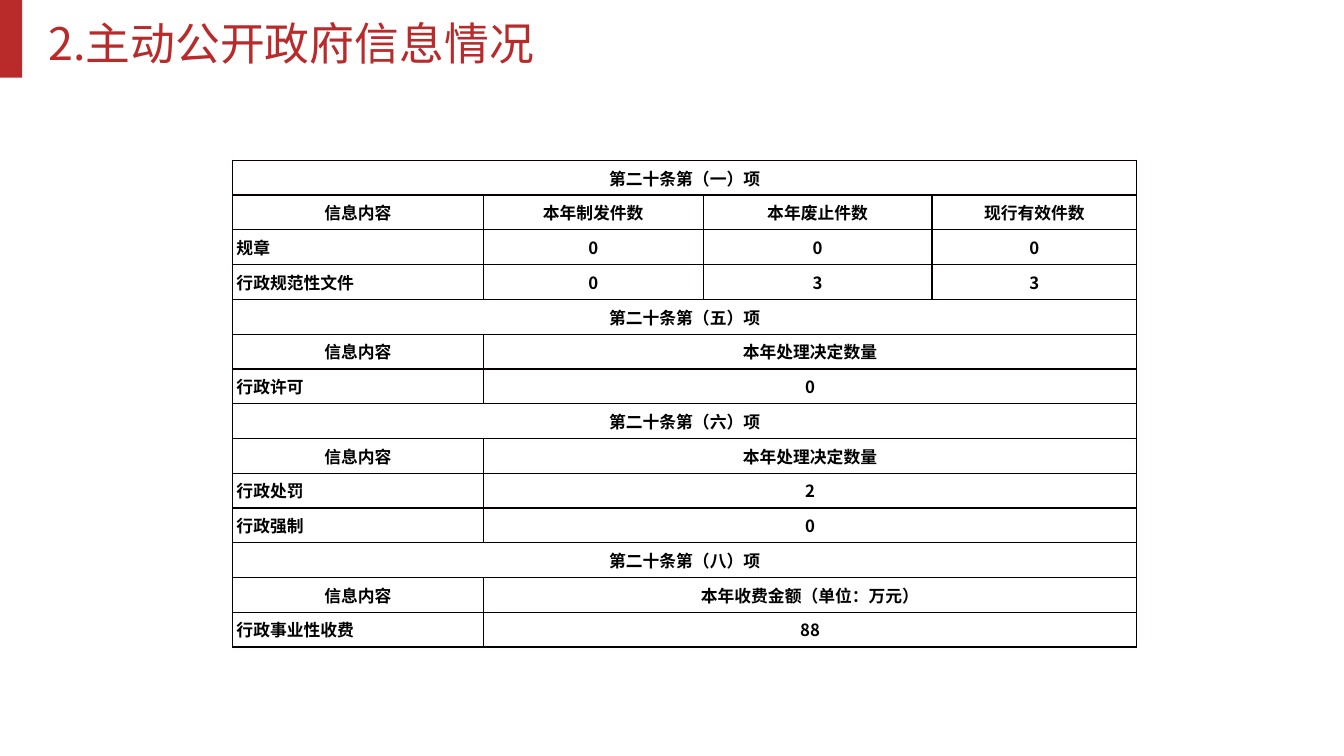
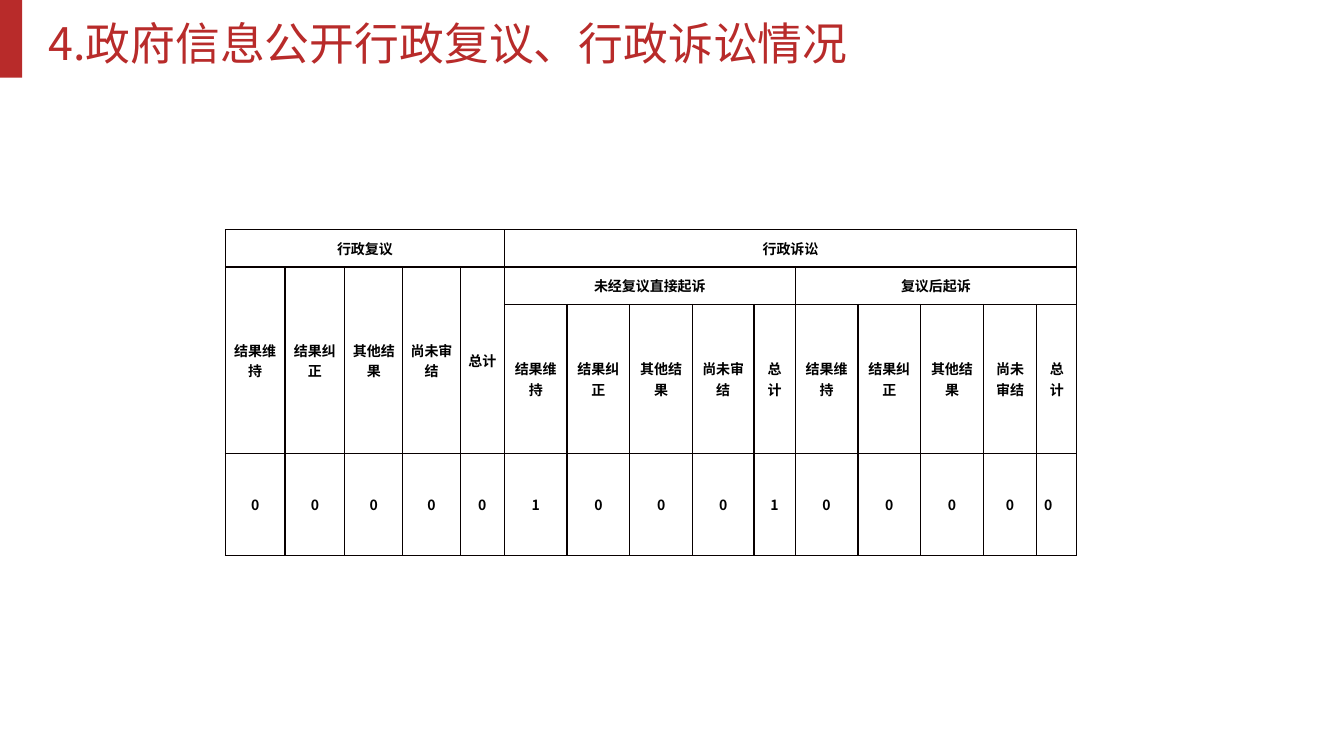
from dataclasses import dataclass

from lxml import etree
from pptx import Presentation
from pptx.dml.color import RGBColor
from pptx.enum.shapes import MSO_SHAPE
from pptx.enum.text import MSO_ANCHOR, MSO_AUTO_SIZE, PP_ALIGN
from pptx.oxml.ns import qn
from pptx.util import Cm, Pt

RECTANGLE = MSO_SHAPE.RECTANGLE
MIDDLE = MSO_ANCHOR.MIDDLE
GROW = MSO_AUTO_SIZE.SHAPE_TO_FIT_TEXT
LEFT_ALIGN, CENTER = PP_ALIGN.LEFT, PP_ALIGN.CENTER


@dataclass(frozen=True)
class Theme:
    font: str = "Noto Sans CJK SC"
    red: str = "B82B2A"
    text: str = "000000"
    border: str = "080000"
    white: str = "FFFFFF"
    title_size: int = 32
    border_width: int = 1


THEME = Theme()

# Content: LEFT and UP mark cells merged with the neighbour on that side
LEFT, UP = "←", "↑"
RESULTS = ["结果维持", "结果纠正", "其他结果", "尚未审结", "总计"]


def heading(text):
    return [text, LEFT, LEFT, LEFT]


def wide(label, value):
    return [label, value, LEFT, LEFT]


DISCLOSURE_ROWS = [
    heading("第二十条第（一）项"),
    ["信息内容", "本年制发件数", "本年废止件数", "现行有效件数"],
    ["规章", "0", "0", "0"],
    ["行政规范性文件", "0", "3", "3"],
    heading("第二十条第（五）项"),
    wide("信息内容", "本年处理决定数量"),
    wide("行政许可", "0"),
    heading("第二十条第（六）项"),
    wide("信息内容", "本年处理决定数量"),
    wide("行政处罚", "2"),
    wide("行政强制", "0"),
    heading("第二十条第（八）项"),
    wide("信息内容", "本年收费金额（单位：万元）"),
    wide("行政事业性收费", "88"),
]
REVIEW_ROWS = [
    ["行政复议"] + [LEFT] * 4 + ["行政诉讼"] + [LEFT] * 9,
    RESULTS + ["未经复议直接起诉"] + [LEFT] * 4 + ["复议后起诉"] + [LEFT] * 4,
    [UP] * 5 + RESULTS * 2,
    list("000001000100000"),
]

# Lengths are centimetres
SLIDES = [
    {
        "title": "2.主动公开政府信息情况",
        "title_width": 12.93,
        "rows": DISCLOSURE_ROWS,
        "origin": (5.86, 4.04),
        "widths": [6.32, 5.54, 5.77, 5.16],
        "heights": [12.27 / len(DISCLOSURE_ROWS)] * len(DISCLOSURE_ROWS),
        "size": 12,
        "inset": 0.1,
        "fill": THEME.white,
        "left_cells": {(row, 0) for row in (2, 3, 6, 9, 10, 13)},
    },
    {
        "title": "4.政府信息公开行政复议、行政诉讼情况",
        "title_width": 20.83,
        "rows": REVIEW_ROWS,
        "origin": (5.68, 5.79),
        "widths": [1.5, 1.51, 1.46, 1.45, 1.11,
                   1.58, 1.58, 1.58, 1.55, 1.04,
                   1.58, 1.58, 1.58, 1.35, 1],
        "heights": [0.94, 0.94, 3.76, 2.57],
        "size": 10,
        "inset": 0.18,
        "fill": None,
        "left_cells": {(3, 14)},
    },
]


def add_run(paragraph, text, size, color, bold=False):
    run = paragraph.add_run()
    run.text = text
    font = run.font
    font.size, font.bold, font.name = Pt(size), bold, THEME.font
    font.color.rgb = RGBColor.from_string(color)
    east_asian = etree.SubElement(run._r.get_or_add_rPr(), qn("a:ea"))
    east_asian.set("typeface", THEME.font)


def add_header(slide, title, width):
    box = slide.shapes.add_textbox(Cm(0.97), Cm(0.28), Cm(width), Cm(1.63))
    frame = box.text_frame
    frame.word_wrap = True
    frame.auto_size = GROW
    add_run(frame.paragraphs[0], title, THEME.title_size, THEME.red)

    bar = slide.shapes.add_shape(RECTANGLE, 0, 0, Cm(0.56), Cm(1.96))
    bar.shadow.inherit = False
    bar.fill.solid()
    bar.fill.fore_color.rgb = RGBColor.from_string(THEME.red)
    bar.line.fill.background()


def set_borders(cell):
    properties = cell._tc.get_or_add_tcPr()
    for side in ("lnL", "lnR", "lnT", "lnB"):
        line = etree.SubElement(properties, qn(f"a:{side}"))
        line.set("w", str(Pt(THEME.border_width)))
        fill = etree.SubElement(line, qn("a:solidFill"))
        etree.SubElement(fill, qn("a:srgbClr")).set("val", THEME.border)


def format_cell(cell, inset, fill):
    set_borders(cell)
    if fill:
        cell.fill.solid()
        cell.fill.fore_color.rgb = RGBColor.from_string(fill)
    else:
        cell.fill.background()
    cell.vertical_anchor = MIDDLE
    cell.margin_left = cell.margin_right = Cm(inset)
    cell.margin_top = cell.margin_bottom = 0


def count_leading(values, mark):
    count = 0
    while count < len(values) and values[count] == mark:
        count += 1
    return count


def add_grid(slide, data):
    rows, widths, heights = data["rows"], data["widths"], data["heights"]
    left, top = data["origin"]
    table = slide.shapes.add_table(
        len(rows), len(widths), Cm(left), Cm(top),
        Cm(sum(widths)), Cm(sum(heights))).table
    table.first_row = table.horz_banding = False
    for column, width in zip(table.columns, widths):
        column.width = Cm(width)
    for table_row, height in zip(table.rows, heights):
        table_row.height = Cm(height)

    for r, row in enumerate(rows):
        for c, text in enumerate(row):
            cell = table.cell(r, c)
            format_cell(cell, data["inset"], data["fill"])
            if text in (LEFT, UP):
                continue
            across = count_leading(row[c + 1:], LEFT)
            down = count_leading([below[c] for below in rows[r + 1:]], UP)
            if across or down:
                cell.merge(table.cell(r + down, c + across))
            paragraph = cell.text_frame.paragraphs[0]
            is_left = (r, c) in data["left_cells"]
            paragraph.alignment = LEFT_ALIGN if is_left else CENTER
            add_run(paragraph, text, data["size"], THEME.text, bold=True)


def main():
    presentation = Presentation()
    presentation.slide_width, presentation.slide_height = Cm(33.87), Cm(19.05)
    blank_layout = presentation.slide_layouts[6]
    for data in SLIDES:
        slide = presentation.slides.add_slide(blank_layout)
        add_header(slide, data["title"], data["title_width"])
        add_grid(slide, data)
    presentation.save("out.pptx")


if __name__ == "__main__":
    main()
